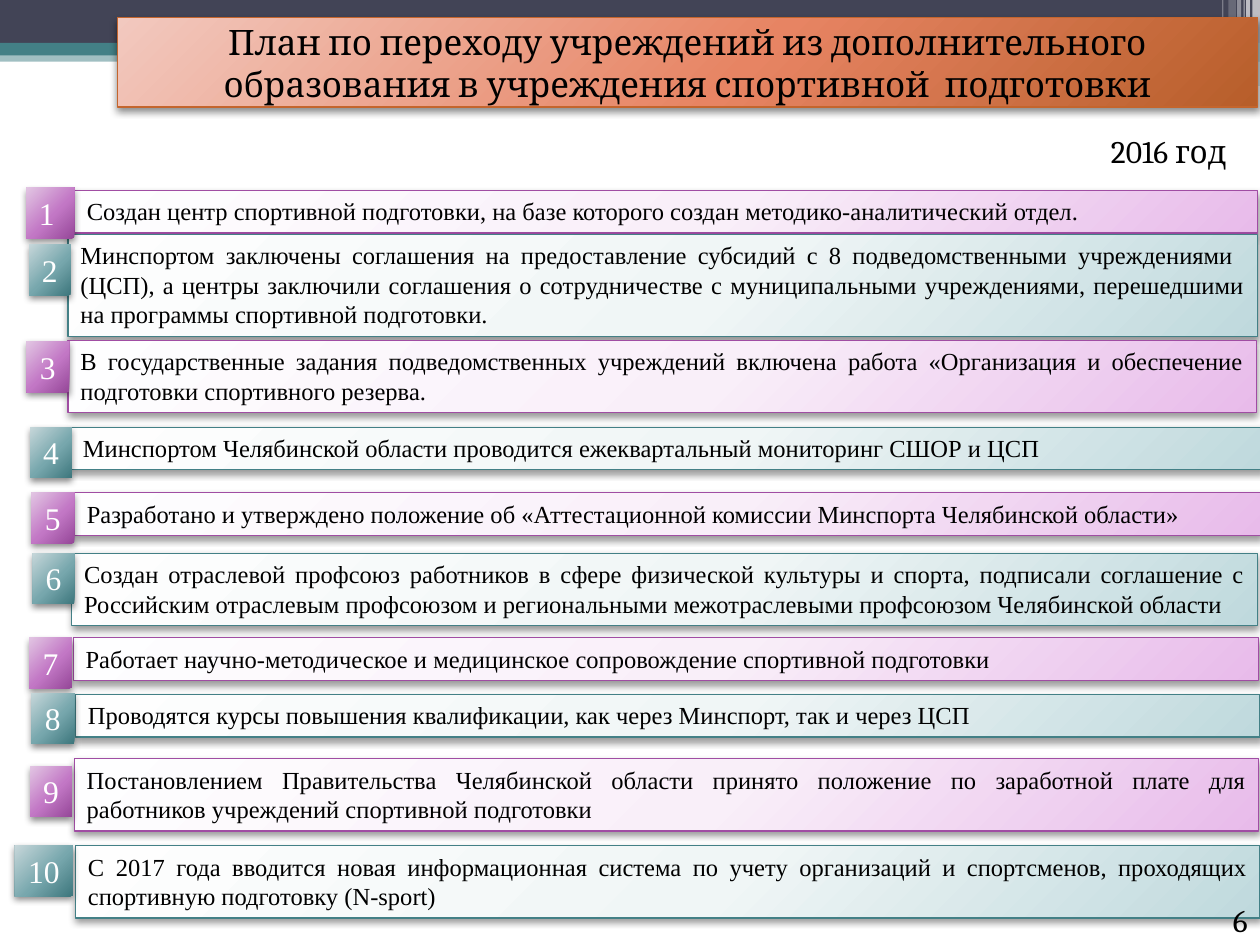
import dataclasses
import typing

import pptx
import pptx.dml.color
import pptx.enum.shapes
import pptx.enum.text
import pptx.oxml
import pptx.oxml.ns
import pptx.util

Pt = pptx.util.Pt
Align = pptx.enum.text.PP_ALIGN
Anchor = pptx.enum.text.MSO_ANCHOR
Preset = pptx.enum.shapes.MSO_SHAPE


@dataclasses.dataclass(frozen=True)
class Theme:
    heading_font: str = "Cambria"
    body_font: str = "Times New Roman"
    title_size: float = 20
    label_size: float = 18
    body_size: float = 14
    black: str = "000000"
    white: str = "FFFFFF"
    navy: str = "424456"
    teal: str = "438086"
    purple: str = "A04DA3"
    orange: str = "C4652D"
    bar_purple: tuple[str, ...] = ("FEFEFF", "F9EFF9", "E8BBEA")
    bar_teal: tuple[str, ...] = ("FEFEFE", "F0F6F6", "BFD9DD")
    badge_purple: tuple[str, ...] = ("E2C6E3", "C277C5", "954898")
    badge_teal: tuple[str, ...] = ("C7D7DA", "77A7AD", "3E777D")
    title_fill: tuple[str, ...] = ("F2C9BF", "E78463", "B75E2A")


THEME = Theme()


class Box(typing.NamedTuple):
    left: float
    top: float
    width: float
    height: float


class Decoration(typing.NamedTuple):
    box: Box
    color: str
    opacity: int = 100
    preset: typing.Any = Preset.RECTANGLE


class PlanItem(typing.NamedTuple):
    left: float
    top: float
    width: float
    line_count: int
    badge_left: float
    badge_top: float
    badge_width: float
    text: str


DECORATIONS = [
    Decoration(Box(0, 28.8, 720, 6.5), THEME.teal, 50),
    Decoration(Box(0, 0, 720, 24.5), THEME.navy),
    Decoration(Box(0, 24.5, 720, 7.2), THEME.teal),
    Decoration(Box(426.2, 28.1, 293.8, 7.2), THEME.teal),
    Decoration(Box(426.2, 34.6, 293.8, 14.4), THEME.teal, 50),
    Decoration(Box(425.5, 38.9, 241.2, 2.2), THEME.white, 100, Preset.ROUNDED_RECTANGLE),
    Decoration(Box(580.3, 46.1, 126, 2.9), THEME.white, 100, Preset.ROUNDED_RECTANGLE),
    Decoration(Box(715.7, 0, 4.3, 49), THEME.white, 65),
    Decoration(Box(712.1, 0, 2.2, 49), THEME.white, 65),
    Decoration(Box(710.6, 0, 0.7, 49), THEME.white, 60),
    Decoration(Box(707, 0, 2.2, 49), THEME.white, 40),
    Decoration(Box(702, 0, 4.3, 46.1), THEME.white, 20),
    Decoration(Box(698.4, 0, 0.7, 46.1), THEME.white, 30),
]

PLAN_ITEMS = [
    PlanItem(42.5, 108.7, 676.1, 1, 15.1, 107.3, 27.4,
             "Создан центр спортивной подготовки, на базе которого создан методико-аналитический отдел."),
    PlanItem(38.9, 133.9, 679.7, 3, 16.6, 139.7, 23.8,
             "Минспортом заключены соглашения на предоставление субсидий с 8 подведомственными "
             "учреждениями  (ЦСП), а центры заключили соглашения о сотрудничестве с муниципальными "
             "учреждениями, перешедшими на программы спортивной подготовки."),
    PlanItem(38.9, 194.4, 679, 2, 15.1, 195.1, 24.5,
             "В государственные задания подведомственных учреждений включена работа «Организация "
             "и обеспечение подготовки спортивного резерва."),
    PlanItem(40.3, 244.1, 681.8, 1, 17.3, 244.1, 23.8,
             "Минспортом Челябинской области проводится ежеквартальный мониторинг СШОР и ЦСП"),
    PlanItem(42.5, 281.5, 678.2, 1, 18, 281.5, 24.5,
             "Разработано и утверждено положение об «Аттестационной комиссии Минспорта Челябинской области»"),
    PlanItem(41, 316.1, 677.5, 2, 18.7, 316.1, 23.8,
             "Создан отраслевой профсоюз работников в сфере физической культуры и спорта, подписали "
             "соглашение с Российским отраслевым профсоюзом и региональными межотраслевыми "
             "профсоюзом Челябинской области"),
    PlanItem(41.8, 364.3, 677.5, 1, 16.6, 364.3, 24.5,
             "Работает научно-методическое и медицинское сопровождение спортивной подготовки"),
    PlanItem(43.2, 396.7, 676.8, 1, 18, 396, 24.5,
             "Проводятся курсы повышения квалификации, как через Минспорт, так и через ЦСП"),
    PlanItem(42.5, 433.4, 676.8, 2, 17.3, 437.8, 23.8,
             "Постановлением Правительства Челябинской области принято положение по заработной "
             "плате для работников учреждений спортивной подготовки"),
    PlanItem(43.2, 483.1, 676.8, 2, 8.6, 483.1, 33.1,
             "С 2017 года вводится новая информационная система по учету организаций и спортсменов, "
             "проходящих спортивную подготовку (N-sport)"),
]


def rgb(color: str) -> pptx.dml.color.RGBColor:
    return pptx.dml.color.RGBColor.from_string(color)


def lengths(box: Box) -> list[int]:
    return [Pt(value) for value in box]


def write_text(shape, text: str, *, size: float, font: str = THEME.body_font,
               color: str = THEME.black, align=Align.LEFT, anchor=Anchor.TOP,
               wrap: bool = True, grow: bool = False) -> None:
    frame = shape.text_frame
    frame.word_wrap = wrap
    frame.vertical_anchor = anchor
    if grow:
        frame.auto_size = pptx.enum.text.MSO_AUTO_SIZE.SHAPE_TO_FIT_TEXT
    paragraph = frame.paragraphs[0]
    paragraph.alignment = align
    run = paragraph.add_run()
    run.text = text
    run.font.size = Pt(size)
    run.font.name = font
    run.font.color.rgb = rgb(color)


def draw_decoration(slide, decoration: Decoration) -> None:
    shape = slide.shapes.add_shape(decoration.preset, *lengths(decoration.box))
    shape.shadow.inherit = False
    shape.line.fill.background()
    shape.fill.solid()
    shape.fill.fore_color.rgb = rgb(decoration.color)
    if decoration.opacity < 100:
        color_element = shape._element.spPr.find(".//" + pptx.oxml.ns.qn("a:srgbClr"))
        alpha = pptx.oxml.parse_xml(
            f'<a:alpha {pptx.oxml.ns.nsdecls("a")} val="{decoration.opacity * 1000}"/>')
        color_element.append(alpha)


def draw_gradient_box(slide, box: Box, colors: tuple[str, ...], line_color: str | None = None,
                      shadow_opacity: int = 45):
    shape = slide.shapes.add_shape(Preset.RECTANGLE, *lengths(box))
    shape.shadow.inherit = False
    if line_color:
        shape.line.color.rgb = rgb(line_color)
        shape.line.width = Pt(0.75)
    else:
        shape.line.fill.background()
    shape.fill.gradient()
    properties = shape._element.spPr
    namespace = pptx.oxml.ns.nsdecls("a")
    stops = "".join(f'<a:gs pos="{position * 1000}"><a:srgbClr val="{color}"/></a:gs>'
                    for position, color in zip((0, 55, 100), colors))
    gradient = pptx.oxml.parse_xml(
        f'<a:gradFill {namespace} rotWithShape="1"><a:gsLst>{stops}</a:gsLst>'
        '<a:path path="circle"><a:fillToRect l="-40000" t="-90000" r="140000" b="190000"/>'
        '</a:path></a:gradFill>')
    properties.replace(properties.find(pptx.oxml.ns.qn("a:gradFill")), gradient)
    shadow = pptx.oxml.parse_xml(
        f'<a:outerShdw {namespace} blurRad="{Pt(4)}" dist="{Pt(2)}" dir="5400000" '
        f'rotWithShape="0"><a:srgbClr val="{THEME.black}">'
        f'<a:alpha val="{shadow_opacity * 1000}"/></a:srgbClr></a:outerShdw>')
    properties.find(pptx.oxml.ns.qn("a:effectLst")).append(shadow)
    return shape


def draw_plan_item(slide, number: int, item: PlanItem) -> None:
    is_purple = number % 2 == 1
    bar = draw_gradient_box(
        slide, Box(item.left, item.top, item.width, 7.4 + 17 * item.line_count),
        THEME.bar_purple if is_purple else THEME.bar_teal,
        THEME.purple if is_purple else THEME.teal, shadow_opacity=40)
    write_text(bar, item.text, size=THEME.body_size, align=Align.JUSTIFY, grow=True)


def draw_badge(slide, number: int, item: PlanItem) -> None:
    badge = draw_gradient_box(
        slide, Box(item.badge_left, item.badge_top, item.badge_width, 29),
        THEME.badge_purple if number % 2 == 1 else THEME.badge_teal)
    is_first = number == 1
    write_text(badge, str(number), size=THEME.label_size, color=THEME.white,
               align=Align.LEFT if is_first else Align.CENTER, wrap=is_first, grow=True)


def main() -> None:
    presentation = pptx.Presentation()
    presentation.slide_width = Pt(720)
    presentation.slide_height = Pt(540)
    slide = presentation.slides.add_slide(presentation.slide_layouts[6])
    for decoration in DECORATIONS:
        draw_decoration(slide, decoration)
    title = draw_gradient_box(slide, Box(67, 10.1, 651.6, 51.1), THEME.title_fill, THEME.orange)
    write_text(title, "План по переходу учреждений из дополнительного образования "
               "в учреждения спортивной  подготовки", size=THEME.title_size,
               font=THEME.heading_font, align=Align.CENTER, anchor=Anchor.MIDDLE)
    year = slide.shapes.add_textbox(*lengths(Box(627.8, 72, 86.4, 29)))
    write_text(year, "2016 год", size=THEME.label_size, font=THEME.heading_font,
               wrap=False, grow=True)
    for draw in (draw_plan_item, draw_badge):
        for number, item in enumerate(PLAN_ITEMS, start=1):
            draw(slide, number, item)
    page_number = slide.shapes.add_textbox(*lengths(Box(660.2, 511.2, 59.8, 28.8)))
    write_text(page_number, "6", size=THEME.label_size, font=THEME.heading_font,
               align=Align.RIGHT, anchor=Anchor.BOTTOM)
    presentation.save("out.pptx")


if __name__ == "__main__":
    main()
